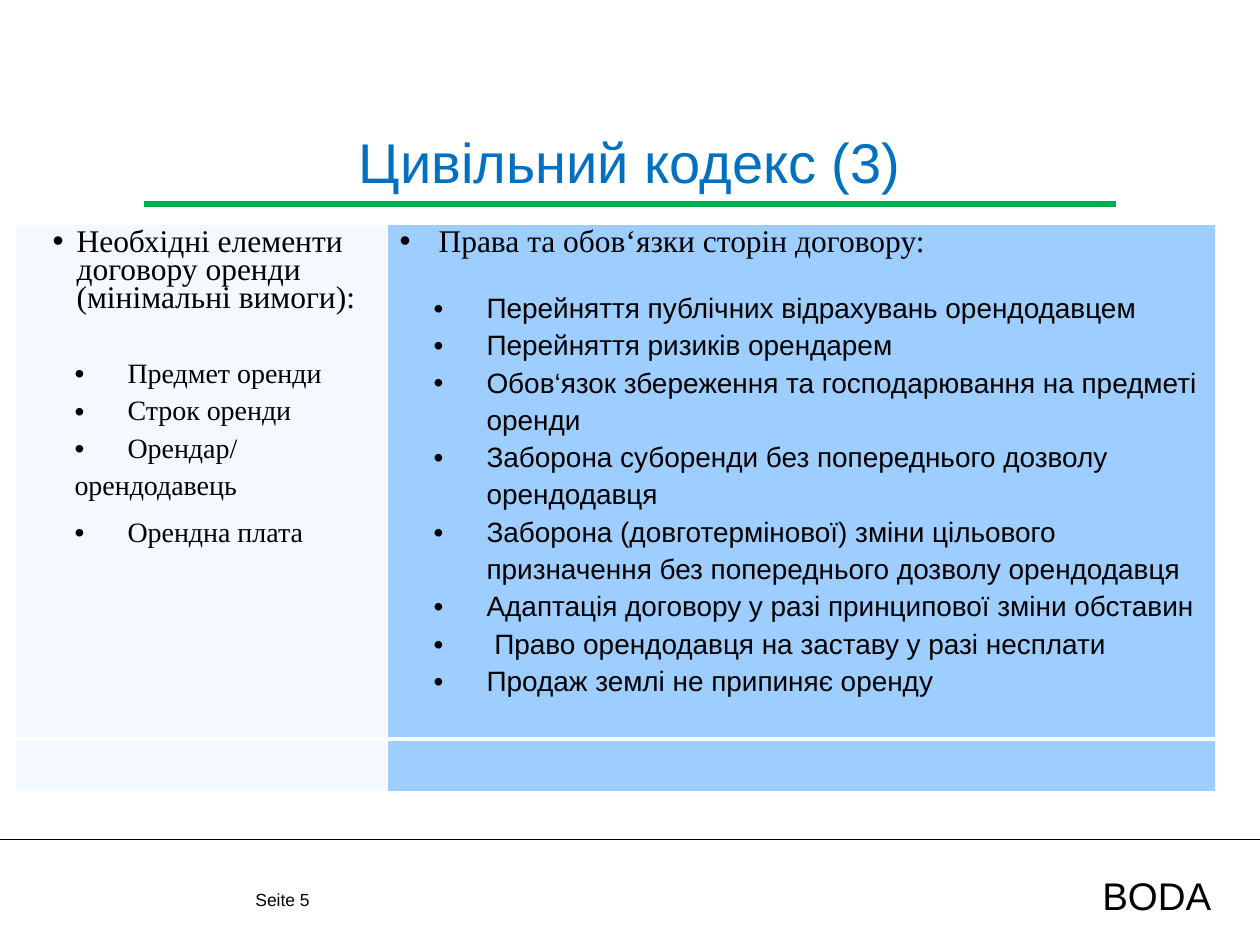
from lxml.etree import SubElement
from pptx import Presentation
from pptx.dml.color import RGBColor
from pptx.enum.shapes import MSO_CONNECTOR
from pptx.enum.text import MSO_ANCHOR, PP_ALIGN
from pptx.oxml.ns import qn
from pptx.util import Pt

SANS, SERIF = "Arial", "Times New Roman"
NEEDS = ["Предмет оренди", "Строк оренди", "Орендар/"]
RIGHTS = [
    "Перейняття публічних відрахувань орендодавцем",
    "Перейняття ризиків орендарем",
    "Обов‘язок збереження та господарювання на предметі оренди",
    "Заборона суборенди без попереднього дозволу орендодавця",
    "Заборона (довготермінової) зміни цільового призначення без "
    "попереднього дозволу орендодавця",
    "Адаптація договору у разі принципової зміни обставин",
    " Право орендодавця на заставу у разі несплати",
    "Продаж землі не припиняє оренду",
]


def px(n):
    return round(n * 914400 / 126)


def paint(target, tone):
    """Set a colour format from a hex string."""
    target.rgb = RGBColor.from_string(tone)


def write(para, text, size, face=SANS, tone="000000"):
    run = para.add_run()
    run.text = text
    run.font.size = Pt(size)
    run.font.name = face
    paint(run.font.color, tone)


def label(slide, box, text, size, tone="000000"):
    frame = slide.shapes.add_textbox(*map(px, box)).text_frame
    frame.word_wrap = True
    para = frame.paragraphs[0]
    write(para, text, size, tone=tone)
    return frame, para


def rule(slide, left, right, y, width, tone):
    line = slide.shapes.add_connector(
        MSO_CONNECTOR.STRAIGHT, px(left), px(y), px(right), px(y))
    line.line.width = Pt(width)
    paint(line.line.color, tone)
    SubElement(line._element.spPr, qn("a:effectLst"))


def item(frame, text, size, face, left, hang, lead, gap=0, dot=True):
    """Add a list paragraph with its indent, line spacing and bullet."""
    para = frame.paragraphs[0]
    if para.runs:
        para = frame.add_paragraph()
    para.line_spacing = lead
    if gap:
        para.space_before = Pt(gap)
    props = para._p.get_or_add_pPr()
    props.set("marL", str(px(left)))
    props.set("indent", str(-px(hang)))
    if dot:
        SubElement(props, qn("a:buFont"), typeface=SANS)
        SubElement(props, qn("a:buChar"), char="•")
    else:
        SubElement(props, qn("a:buNone"))
    write(para, text, size, face)


def style(cell, alpha, top, bottom):
    """Give a cell white borders and a see-through blue fill."""
    props = cell._tc.get_or_add_tcPr()
    for side, width in zip("LRTB", (1, 1, top, bottom)):
        edge = SubElement(props, qn("a:ln" + side), w=str(Pt(width)))
        fill = SubElement(edge, qn("a:solidFill"))
        SubElement(fill, qn("a:srgbClr"), val="FFFFFF")
    cell.fill.solid()
    paint(cell.fill.fore_color, "3399FF")
    tone = props.find(qn("a:solidFill")).find(qn("a:srgbClr"))
    SubElement(tone, qn("a:alpha"), val=str(alpha * 1000))


def needs(frame):
    item(frame, "Необхідні елементи договору оренди (мінімальні вимоги):",
         18, SERIF, 49, 24, 0.8)
    for i, text in enumerate(NEEDS):
        item(frame, text, 16, SERIF, 100, 53, 1.2, 0 if i else 22)
    item(frame, "орендодавець", 16, SERIF, 47, 0, 1.2, dot=False)
    item(frame, "Орендна плата", 16, SERIF, 100, 53, 1.5)


def rights(frame):
    item(frame, "Права та обов‘язки сторін договору:",
         18, SERIF, 39, 39, 0.8)
    for i, text in enumerate(RIGHTS):
        item(frame, text, 16, SANS, 87, 53, 1.2, 0 if i else 16.5)


def grid(slide, left, top, cols, rows):
    size = (left, top, sum(cols), sum(rows))
    table = slide.shapes.add_table(
        len(rows), len(cols), *map(px, size)).table
    table.first_row = table.horz_banding = False
    for col, width in zip(table.columns, cols):
        col.width = px(width)
    for row, height in zip(table.rows, rows):
        row.height = px(height)
    for c, alpha in enumerate((6, 48)):
        style(table.cell(0, c), alpha, 1, 3)
        style(table.cell(1, c), alpha, 3, 1)
    needs(table.cell(0, 0).text_frame)
    rights(table.cell(0, 1).text_frame)


def head(slide, left, top, width, height):
    frame, para = label(slide, (left, top, width, height),
                        "Цивільний кодекс (3)", 32, "0070C0")
    frame.vertical_anchor = MSO_ANCHOR.MIDDLE
    para.alignment = PP_ALIGN.CENTER
    rule(slide, left, left + width, top + 98, 3, "00B050")


def foot(slide, top, width):
    rule(slide, 0, width, top, 0.25, "000000")
    para = label(slide, (width - 170, top + 47, 147, 35), "BODA", 22)[1]
    para.line_spacing = 0.5
    label(slide, (243, top + 44, 120, 66), "Seite 5", 10)


def main():
    deck = Presentation()
    deck.slide_width, deck.slide_height = px(1260), px(945)
    slide = deck.slides.add_slide(deck.slide_layouts[6])
    foot(slide, 839, 1260)
    head(slide, 144, 106, 972, 110)
    grid(slide, 15, 224, (372, 829), (513, 53))
    deck.save("out.pptx")


if __name__ == "__main__":
    main()
